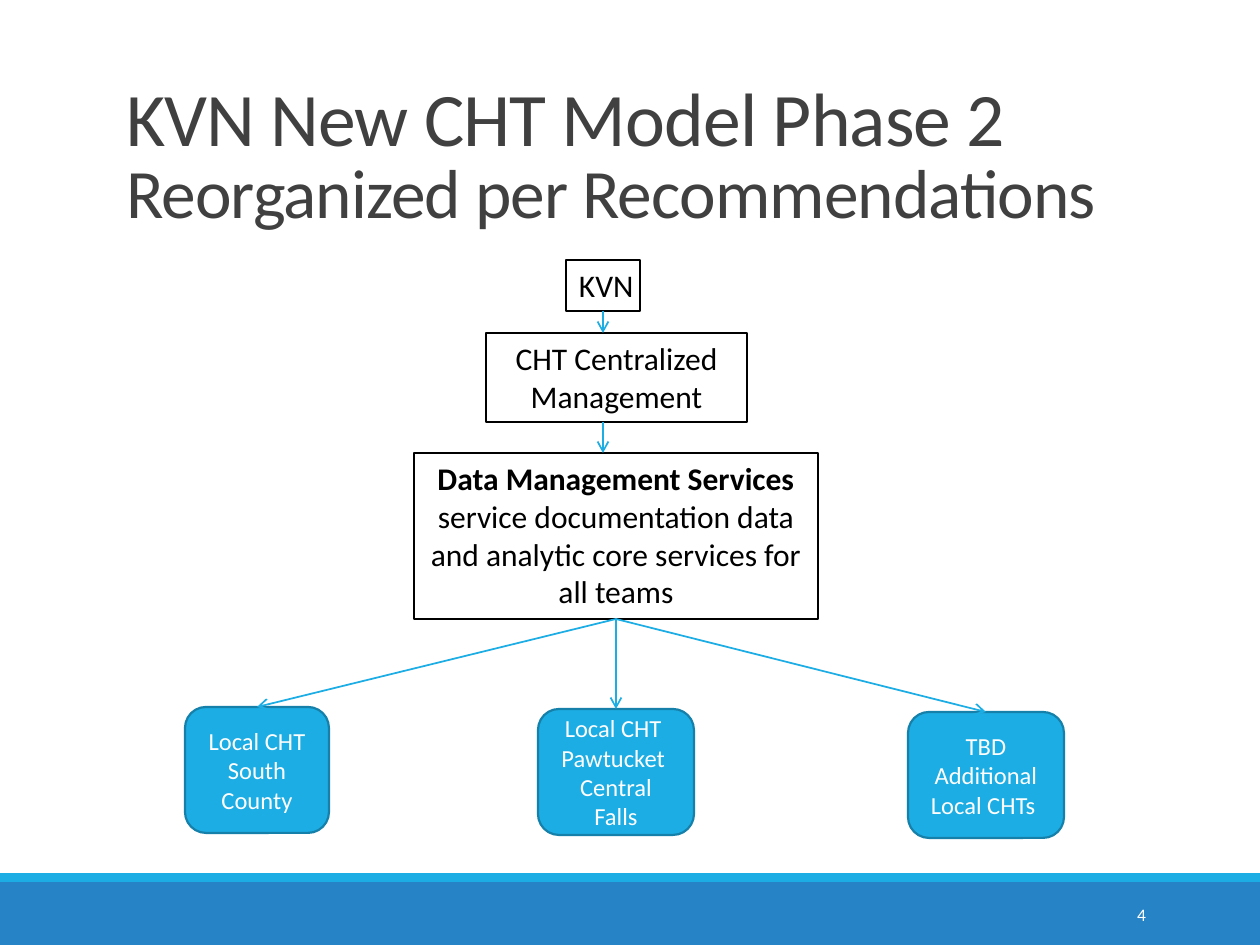
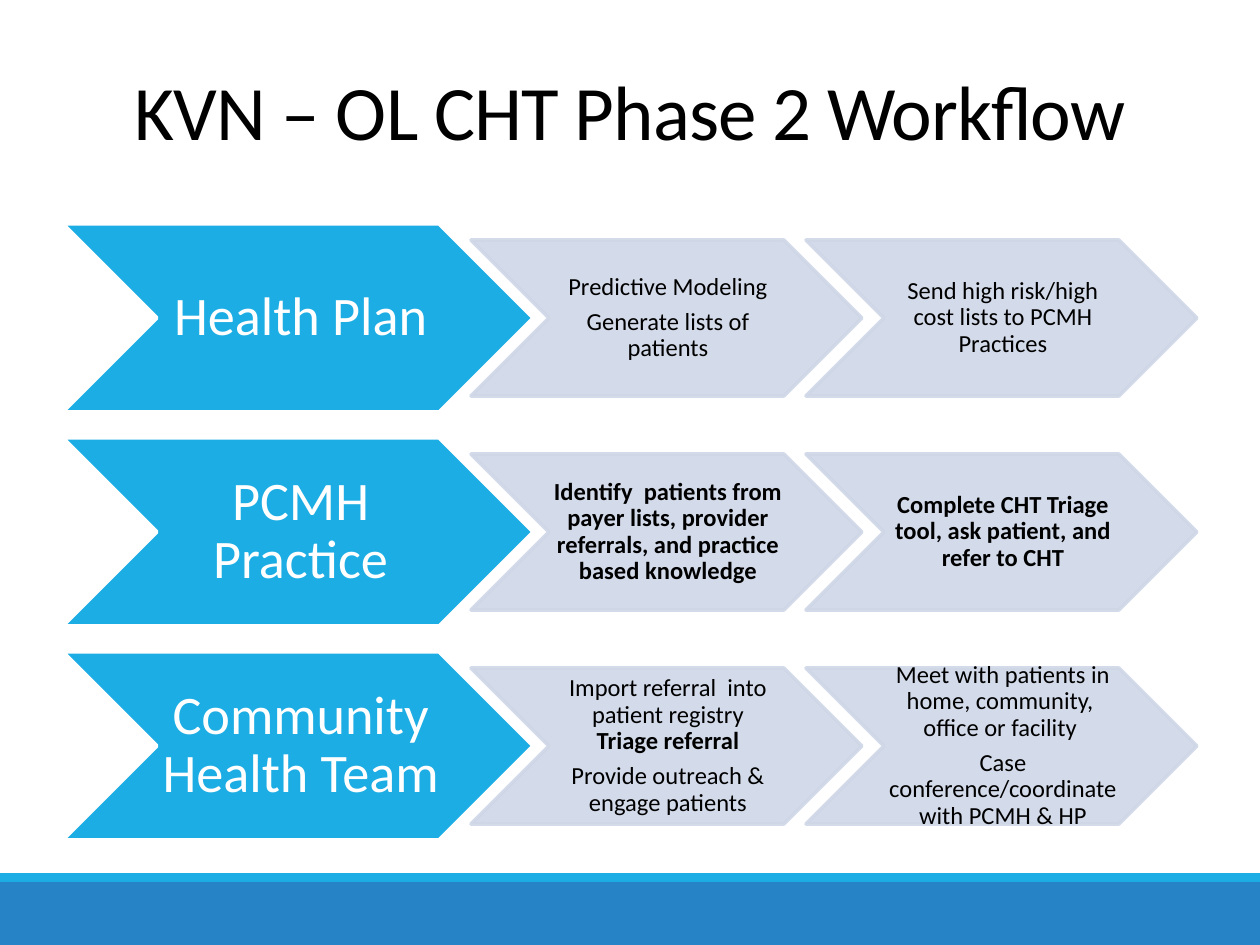
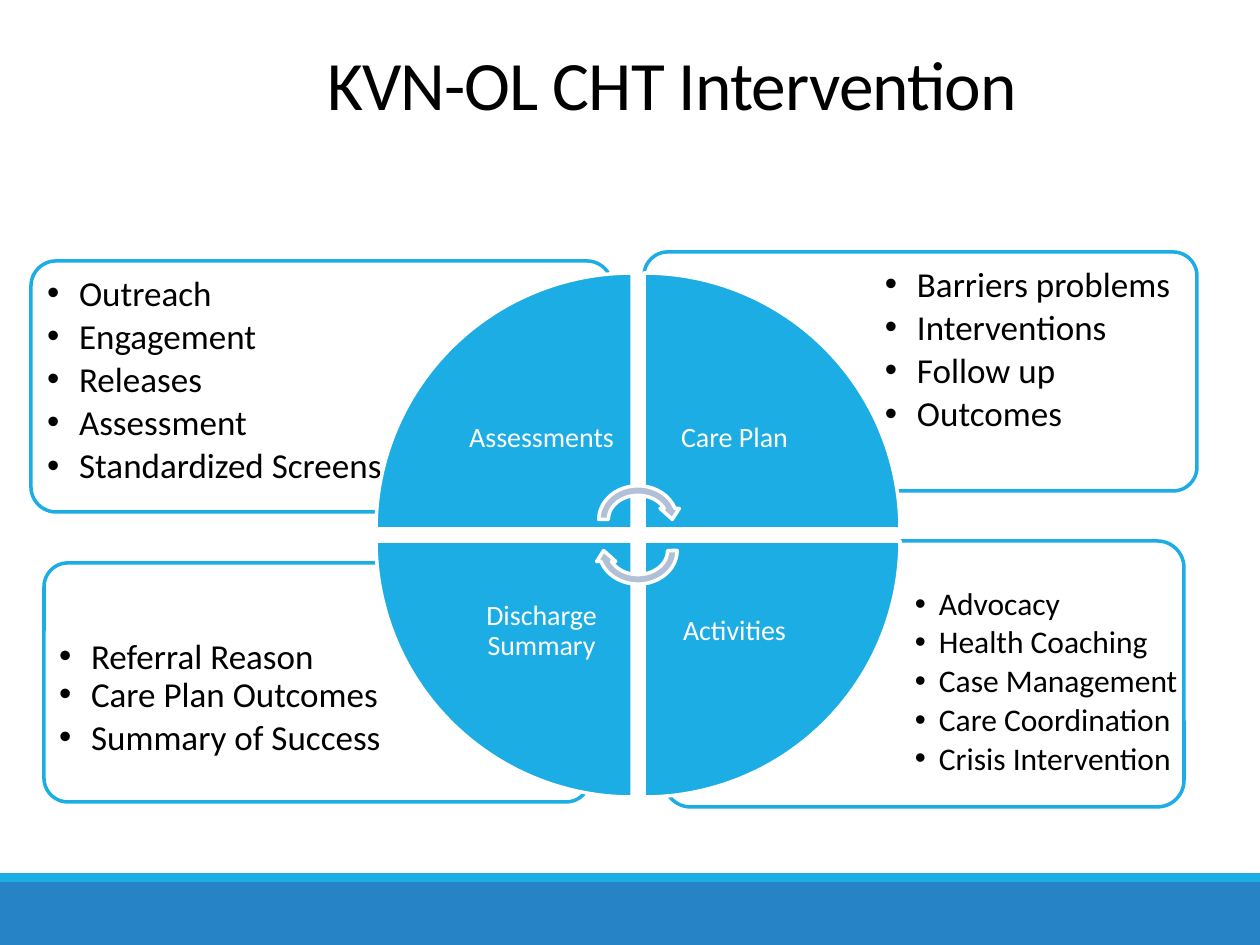
from dataclasses import dataclass
from typing import Optional

from lxml.etree import SubElement
from pptx import Presentation
from pptx.dml.color import RGBColor
from pptx.enum.shapes import MSO_CONNECTOR, MSO_SHAPE
from pptx.enum.text import MSO_ANCHOR, MSO_AUTO_SIZE, PP_ALIGN
from pptx.oxml.ns import qn
from pptx.util import Emu, Pt

PIXELS_PER_INCH = 126
FONT = "Calibri"
BLUE = "2683C6"
CYAN = "1CADE4"
DARK_CYAN = "1580A9"
PALE = "CFD7E7"
ARROW_GREY = "B1C0D7"
CHARCOAL = "404040"
BLACK = "000000"
WHITE = "FFFFFF"
BOTTOM, TOP = 2, 0


@dataclass(frozen=True)
class Box:
    left: int
    top: int
    width: int
    height: int


@dataclass(frozen=True)
class Look:
    fill: Optional[str] = None
    line: Optional[str] = None
    weight: float = 1
    fill_alpha: int = 100
    line_alpha: int = 100


@dataclass(frozen=True)
class TextStyle:
    size: float
    color: str
    align: PP_ALIGN = PP_ALIGN.CENTER
    anchor: MSO_ANCHOR = MSO_ANCHOR.MIDDLE
    insets: tuple[int, int, int, int] = (13, 6, 13, 6)
    line_spacing: float = 1.0
    bullet_indent: int = 0
    tracking: int = 0
    wrap: bool = True


@dataclass(frozen=True)
class Piece:
    text: str
    bold: bool = False
    size: Optional[float] = None


@dataclass(frozen=True)
class Line:
    pieces: tuple[Piece, ...]
    before: float = 0


@dataclass(frozen=True)
class Row:
    heading: str
    steps: tuple[tuple[Line, ...], tuple[Line, ...]]


@dataclass(frozen=True)
class Panel:
    frame: Box
    text_box: Box
    style: TextStyle
    items: tuple[Line, ...]


@dataclass(frozen=True)
class Quadrant:
    label: str
    column: int
    row: int
    rotation: int


def px(value: float) -> Emu:
    return Emu(round(value * 914400 / PIXELS_PER_INCH))


def rgb(color: str) -> RGBColor:
    return RGBColor.from_string(color)


def place(box: Box) -> tuple[Emu, Emu, Emu, Emu]:
    return px(box.left), px(box.top), px(box.width), px(box.height)


def line(text: str, bold: bool = False, before: float = 0) -> Line:
    return Line((Piece(text, bold),), before)


def items(*texts: str, before: float) -> tuple[Line, ...]:
    return tuple(line(text, before=before if index else 0) for index, text in enumerate(texts))


def fade(element, alpha: int) -> None:
    if alpha < 100:
        for color in element.iter(qn("a:srgbClr")):
            SubElement(color, qn("a:alpha")).set("val", str(alpha * 1000))


def add_bullet(paragraph, indent: int) -> None:
    properties = paragraph._p.get_or_add_pPr()
    properties.set("marL", str(px(indent)))
    properties.set("indent", str(-px(indent)))
    color = SubElement(SubElement(properties, qn("a:buClr")), qn("a:srgbClr"))
    color.set("val", BLACK)
    SubElement(properties, qn("a:buFont")).set("typeface", "Arial")
    SubElement(properties, qn("a:buChar")).set("char", "•")


def write(shape, lines: tuple[Line, ...], style: TextStyle) -> None:
    frame = shape.text_frame
    frame.auto_size = MSO_AUTO_SIZE.NONE
    frame.word_wrap = style.wrap
    frame.vertical_anchor = style.anchor
    left, top, right, bottom = map(px, style.insets)
    frame.margin_left, frame.margin_top = left, top
    frame.margin_right, frame.margin_bottom = right, bottom
    for index, content in enumerate(lines):
        paragraph = frame.add_paragraph() if index else frame.paragraphs[0]
        paragraph.alignment = style.align
        paragraph.line_spacing = style.line_spacing
        paragraph.space_before = Pt(content.before)
        if style.bullet_indent:
            add_bullet(paragraph, style.bullet_indent)
        for piece in content.pieces:
            if piece.text == "\n":
                paragraph.add_line_break()
                continue
            run = paragraph.add_run()
            run.text = piece.text
            run.font.name = FONT
            run.font.size = Pt(piece.size or style.size)
            run.font.bold = piece.bold
            run.font.color.rgb = rgb(style.color)
            if style.tracking:
                run._r.get_or_add_rPr().set("spc", str(style.tracking))


def add_figure(slide, kind: MSO_SHAPE, box: Box, look: Look, rotation: int = 0):
    shape = slide.shapes.add_shape(kind, *place(box))
    shape.shadow.inherit = False
    shape.rotation = rotation
    if look.fill:
        shape.fill.solid()
        shape.fill.fore_color.rgb = rgb(look.fill)
        fade(shape._element.spPr.find(qn("a:solidFill")), look.fill_alpha)
    else:
        shape.fill.background()
    if look.line:
        shape.line.color.rgb = rgb(look.line)
        shape.line.width = Pt(look.weight)
        fade(shape._element.spPr.find(qn("a:ln")), look.line_alpha)
    else:
        shape.line.fill.background()
    return shape


def add_text(slide, box: Box, lines: tuple[Line, ...], style: TextStyle) -> None:
    write(slide.shapes.add_textbox(*place(box)), lines, style)


def add_arrow(slide, start: tuple[int, int], end: tuple[int, int], source=None, target=None) -> None:
    connector = slide.shapes.add_connector(
        MSO_CONNECTOR.STRAIGHT, *map(px, start), *map(px, end))
    connector.line.color.rgb = rgb(CYAN)
    connector.line.width = Pt(1)
    SubElement(connector.line._get_or_add_ln(), qn("a:tailEnd")).set("type", "arrow")
    SubElement(connector._element.spPr, qn("a:effectLst"))
    if source is not None:
        connector.begin_connect(source, BOTTOM)
    if target is not None:
        connector.end_connect(target, TOP)


def add_slide(presentation, title_box: Box, title: Line, style: TextStyle):
    slide = presentation.slides.add_slide(presentation.slide_layouts[5])
    add_figure(slide, MSO_SHAPE.RECTANGLE, Box(0, 882, 1260, 63), Look(BLUE))
    add_figure(slide, MSO_SHAPE.RECTANGLE, Box(0, 873, 1260, 9), Look(CYAN))
    placeholder = slide.shapes.title
    placeholder.left, placeholder.top, placeholder.width, placeholder.height = place(title_box)
    write(placeholder, (title,), style)
    return slide


def title_style(size: float, color: str = BLACK, align: PP_ALIGN = PP_ALIGN.CENTER,
                anchor: MSO_ANCHOR = MSO_ANCHOR.MIDDLE) -> TextStyle:
    return TextStyle(size, color, align, anchor, line_spacing=0.85, tracking=-50)


def add_model_slide(presentation) -> None:
    title = Line((Piece("KVN New CHT Model Phase 2"), Piece("\n"),
                  Piece("Reorganized per Recommendations", size=39.6)))
    slide = add_slide(presentation, Box(113, 39, 1040, 200), title,
                      title_style(43.2, CHARCOAL, PP_ALIGN.LEFT, MSO_ANCHOR.BOTTOM))
    add_text(slide, Box(1023, 890, 136, 50), (line("4"),),
             TextStyle(10, WHITE, PP_ALIGN.RIGHT))

    outline = Look(line=BLACK, weight=0.75)
    box_style = TextStyle(18, BLACK, anchor=MSO_ANCHOR.TOP)
    boxes = (
        (Box(566, 260, 74, 51), line("KVN"),
         TextStyle(18, BLACK, PP_ALIGN.LEFT, MSO_ANCHOR.TOP, wrap=False)),
        (Box(486, 333, 261, 89), line("CHT Centralized Management"), box_style),
        (Box(414, 453, 404, 166), Line((
            Piece("Data Management Services", True),
            Piece(" service documentation data and analytic core services for all teams"),
        )), box_style),
    )
    tiers = []
    for box, content, style in boxes:
        tier = add_figure(slide, MSO_SHAPE.RECTANGLE, box, outline)
        write(tier, (content,), style)
        tiers.append(tier)
    add_arrow(slide, (603, 311), (603, 333), source=tiers[0])
    add_arrow(slide, (603, 422), (603, 453))

    teams = (
        (Box(185, 707, 144, 126), ("Local CHT", "South County")),
        (Box(538, 709, 156, 126), ("Local CHT ", "Pawtucket ", "Central Falls")),
        (Box(908, 712, 156, 126), ("TBD", "Additional Local CHTs ")),
    )
    for box, texts in teams:
        team = add_figure(slide, MSO_SHAPE.ROUNDED_RECTANGLE, box, Look(CYAN, DARK_CYAN, 1.25))
        write(team, items(*texts, before=0), TextStyle(14, WHITE))
        add_arrow(slide, (616, 619), (box.left + box.width // 2, box.top), tiers[-1], team)


def add_chevron(slide, box: Box, look: Look, lines: tuple[Line, ...], style: TextStyle) -> None:
    add_figure(slide, MSO_SHAPE.CHEVRON, box, look)
    text_box = Box(box.left + box.height // 2, box.top, box.width - box.height, box.height)
    add_text(slide, text_box, lines, style)


def add_workflow_slide(presentation) -> None:
    slide = add_slide(presentation, Box(63, 38, 1134, 158),
                      line("KVN – OL CHT Phase 2 Workflow"), title_style(44))
    rows = (
        Row("Health Plan", (
            items("Predictive Modeling", "Generate lists of patients", before=4.9),
            (line("Send high risk/high cost lists to PCMH Practices"),))),
        Row("PCMH Practice", (
            (line("Identify  patients from payer lists, provider referrals, "
                  "and practice based knowledge", True),),
            (line("Complete CHT Triage tool, ask patient, and refer to CHT", True),))),
        Row("Community Health Team", (
            (line("Import referral  into patient registry"), line("Triage referral", True),
             line("Provide outreach & engage patients", before=4.9)),
            items("Meet with patients in home, community,  office or facility ",
                  "Case conference/coordinate with PCMH & HP", before=4.9))),
    )
    heading_style = TextStyle(31, WHITE, insets=(5, 3, 0, 3), line_spacing=0.9)
    step_style = TextStyle(14, BLACK, insets=(3, 1, 0, 1), line_spacing=0.9)
    for index, row in enumerate(rows):
        top = 224 + 214 * index
        add_chevron(slide, Box(63, top, 470, 188), Look(CYAN, WHITE, 2),
                    (line(row.heading),), heading_style)
        for column, step in enumerate(row.steps):
            add_chevron(slide, Box(471 + 335 * column, top + 16, 391, 156),
                        Look(PALE, PALE, 2, 90, 90), step, step_style)


def list_style(size: float, insets: tuple[int, int, int, int], indent: int) -> TextStyle:
    return TextStyle(size, BLACK, PP_ALIGN.LEFT, MSO_ANCHOR.TOP, insets, 0.9, indent)


def add_intervention_slide(presentation) -> None:
    slide = add_slide(presentation, Box(105, 10, 1134, 158),
                      line("KVN-OL CHT Intervention"), title_style(39.6))
    left_style = list_style(20, (10, 10, 10, 10), 32)
    panels = (
        Panel(Box(664, 541, 520, 266), Box(827, 588, 353, 195),
              list_style(18, (88, 0, 0, 9), 24),
              items("Advocacy", "Health Coaching", "Case Management",
                    "Care Coordination", "Crisis Intervention", before=2.7)),
        Panel(Box(44, 563, 546, 239), Box(49, 629, 370, 169), left_style,
              (line("Referral Reason"), line("Care Plan Outcomes"),
               line("Summary of Success", before=3))),
        Panel(Box(644, 252, 553, 239), Box(809, 257, 383, 169),
              list_style(20, (76, 10, 10, 10), 32),
              items("Barriers problems", "Interventions", "Follow up", "Outcomes", before=3)),
        Panel(Box(31, 261, 581, 251), Box(37, 266, 396, 178), left_style,
              items("Outreach", "Engagement", "Releases", "Assessment",
                    "Standardized Screens", before=3)),
    )
    for panel in panels:
        frame = add_figure(slide, MSO_SHAPE.ROUNDED_RECTANGLE, panel.frame,
                           Look(WHITE, CYAN, 2, fill_alpha=90))
        frame.adjustments[0] = 0.1
        add_text(slide, panel.text_box, panel.items, panel.style)

    wedge, label, pitch = 256, 181, 268
    label_style = TextStyle(16, WHITE, insets=(15, 15, 15, 15), line_spacing=0.9)
    quadrants = (
        Quadrant("Assessments", 0, 0, 0),
        Quadrant("Care Plan", 1, 0, 90),
        Quadrant("Activities", 1, 1, 180),
        Quadrant("Discharge Summary", 0, 1, 270),
    )
    for quadrant in quadrants:
        left = 376 + pitch * quadrant.column
        top = 273 + pitch * quadrant.row
        add_figure(slide, MSO_SHAPE.PIE_WEDGE, Box(left, top, wedge, wedge),
                   Look(CYAN, WHITE, 2), quadrant.rotation)
        label_left = left + (wedge - label) * (1 - quadrant.column)
        label_top = top + (wedge - label) * (1 - quadrant.row)
        add_text(slide, Box(label_left, label_top, label, label),
                 (line(quadrant.label),), label_style)
    for top, rotation in ((481, 0), (512, 180)):
        add_figure(slide, MSO_SHAPE.CIRCULAR_ARROW, Box(594, top, 88, 77),
                   Look(ARROW_GREY, WHITE, 2), rotation)


def main() -> None:
    presentation = Presentation()
    presentation.slide_width, presentation.slide_height = px(1260), px(945)
    add_model_slide(presentation)
    add_workflow_slide(presentation)
    add_intervention_slide(presentation)
    presentation.save("out.pptx")


if __name__ == "__main__":
    main()
